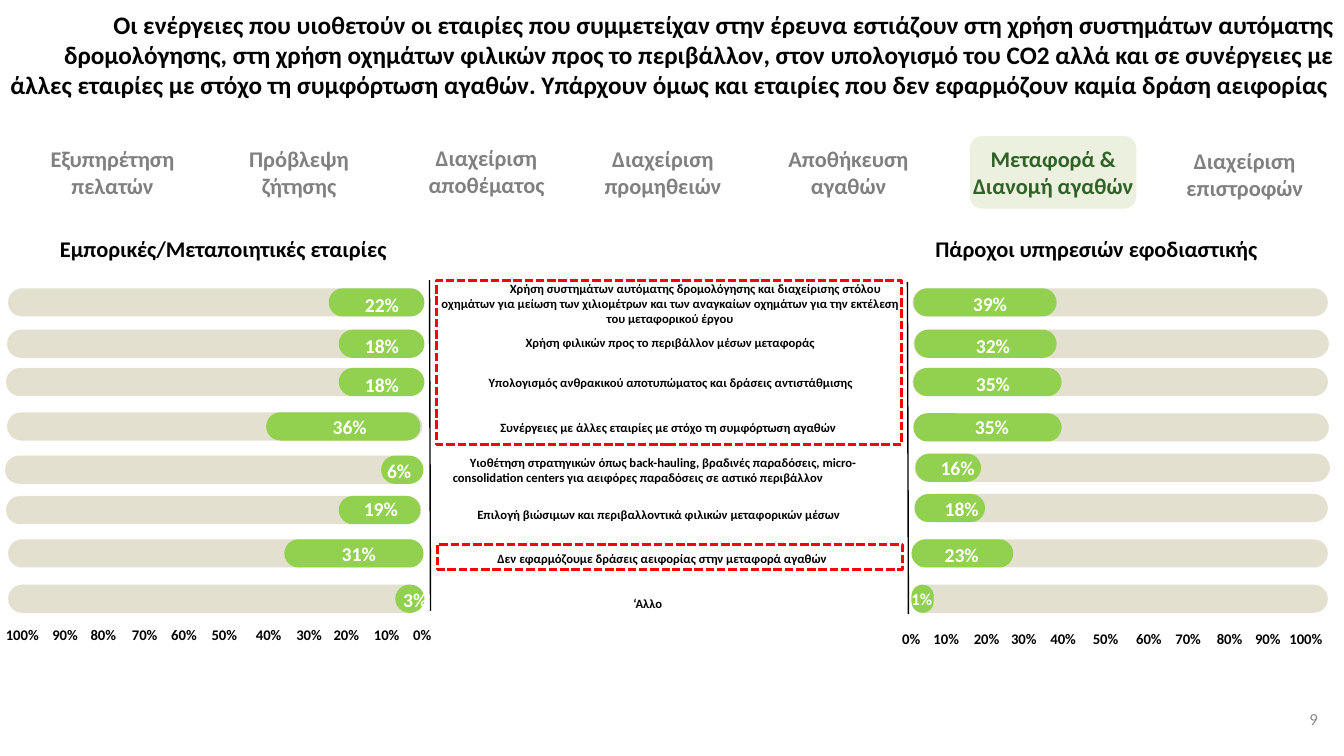
import pptx
import pptx.util
from pptx.dml.color import RGBColor
from pptx.enum.dml import MSO_LINE
from pptx.enum.shapes import MSO_CONNECTOR, MSO_SHAPE
from pptx.enum.text import MSO_ANCHOR, PP_ALIGN
from pptx.oxml.ns import qn
from lxml import etree

COLUMNS, ROWS = 1333, 750
BLACK, WHITE, GREY, GREEN, TRACK = "000000", "FFFFFF", "808080", "92D050", "DDD9C3"
BAR_HEIGHT = 28

# Stage: text, left, top
STAGES = [
    ("Εξυπηρέτηση πελατών", 29, 139),
    ("Πρόβλεψη ζήτησης", 214, 139),
    ("Διαχείριση αποθέματος", 400, 138),
    ("Διαχείριση προμηθειών", 575, 139),
    ("Αποθήκευση αγαθών", 759, 139),
    ("Διαχείριση επιστροφών", 1152, 141),
]

# Action: text, left, top, width
ACTIONS = [
    (" \tΧρήση συστημάτων αυτόματης δρομολόγησης και διαχείρισης στόλου οχημάτων για μείωση "
     "των χιλιομέτρων και των αναγκαίων οχημάτων για την εκτέλεση του μεταφορικού έργου", 426, 279, 477),
    (" \tΧρήση φιλικών προς το περιβάλλον μέσων μεταφοράς ", 388, 318, 506),
    (" \tΥπολογισμός ανθρακικού αποτυπώματος και δράσεις αντιστάθμισης", 378, 357, 524),
    (" \tΣυνέργειες με άλλες εταιρίες με στόχο τη συμφόρτωση αγαθών", 380, 402, 515),
    (" \tΥιοθέτηση στρατηγικών όπως back-hauling, βραδινές παραδόσεις, micro-consolidation "
     "centers για αειφόρες παραδόσεις σε αστικό περιβάλλον", 381, 444, 503),
    (" \tΕπιλογή βιώσιμων και περιβαλλοντικά φιλικών μεταφορικών μέσων ", 378, 488, 503),
    (" \tΔεν εφαρμόζουμε δράσεις αειφορίας στην μεταφορά αγαθών", 380, 532, 503),
    ("‘Αλλο", 391, 577, 503),
]

# Bar: value, middle, track left, track width, bar left, bar width, label left, label top
TRADE_BARS = [
    (22, 300, 8, 412, 326, 95, 352, 286),
    (18, 341, 7, 412, 336, 85, 352, 326),
    (18, 379, 6, 412, 336, 85, 352, 365),
    (36, 423, 7, 412, 264, 153, 320, 407),
    (6, 466, 5, 412, 378, 42, 374, 450),
    (19, 506, 6, 412, 336, 81, 351, 488),
    (31, 549, 8, 412, 282, 138, 329, 533),
    (3, 594, 8, 412, 392, 29, 390, 578),
]
PROVIDER_BARS = [
    (39, 300, 905, 412, 906, 142, 955, 285),
    (32, 341, 906, 412, 907, 141, 958, 326),
    (35, 379, 905, 412, 906, 147, 958, 364),
    (35, 424, 906, 412, 906, 147, 957, 407),
    (16, 464, 907, 412, 908, 65, 923, 447),
    (18, 504, 915, 402, 907, 70, 927, 488),
    (23, 549, 905, 412, 904, 101, 927, 534),
    (1, 594, 905, 412, 904, 22, 894, 579),
]

# Axis label lefts, from 0% to 100%
TRADE_AXIS = [400, 361, 321, 284, 244, 200, 160, 121, 80, 42, -4]
PROVIDER_AXIS = [885, 916, 956, 993, 1032, 1074, 1117, 1156, 1197, 1235, 1269]


def color(value):
    return RGBColor.from_string(value)


class SlideBuilder:
    """Places styled elements on a grid of COLUMNS by ROWS."""

    font_name = "Calibri"

    def __init__(self, presentation):
        self.column = presentation.slide_width / COLUMNS
        self.row = presentation.slide_height / ROWS
        self.slide = presentation.slides.add_slide(presentation.slide_layouts[6])

    def place(self, left, top, width, height):
        return (round(left * self.column), round(top * self.row),
                round(width * self.column), round(height * self.row))

    def text(self, words, left, top, width, height, size, fill=BLACK, align=PP_ALIGN.CENTER,
             anchor=MSO_ANCHOR.TOP, bold=True, spacing=None):
        shape = self.slide.shapes.add_textbox(*self.place(left, top, width, height))
        frame = shape.text_frame
        frame.word_wrap = True
        frame.vertical_anchor = anchor
        paragraph = frame.paragraphs[0]
        paragraph.text = words
        paragraph.alignment = align
        if spacing:
            paragraph.line_spacing = spacing
        font = paragraph.font
        font.name, font.size, font.bold = self.font_name, pptx.util.Pt(size), bold
        font.color.rgb = color(fill)

    def rounded(self, left, top, width, height, fill, roundness=0.5, opacity=None):
        shape = self.slide.shapes.add_shape(
            MSO_SHAPE.ROUNDED_RECTANGLE, *self.place(left, top, width, height))
        shape.shadow.inherit = False
        shape.adjustments[0] = roundness
        shape.fill.solid()
        shape.fill.fore_color.rgb = color(fill)
        shape.line.fill.background()
        if opacity:
            tint = shape.fill._xPr.find(qn("a:solidFill"))[0]
            etree.SubElement(tint, qn("a:alpha"), val=str(opacity * 1000))

    def highlight(self, left, top, width, height):
        shape = self.slide.shapes.add_shape(
            MSO_SHAPE.RECTANGLE, *self.place(left, top, width, height))
        shape.shadow.inherit = False
        shape.fill.background()
        shape.line.color.rgb = color("FF0000")
        shape.line.width = pptx.util.Pt(2)
        shape.line.dash_style = MSO_LINE.SQUARE_DOT

    def line(self, left, top, right, bottom):
        connector = self.slide.shapes.add_connector(
            MSO_CONNECTOR.STRAIGHT, *self.place(left, top, right, bottom))
        connector.line.color.rgb = color(BLACK)
        connector.line.width = pptx.util.Pt(1)
        etree.SubElement(connector._element.spPr, qn("a:effectLst"))

    def bar(self, value, middle, track_left, track_width, left, width, label_left, label_top):
        top = middle - BAR_HEIGHT / 2
        self.rounded(track_left, top, track_width, BAR_HEIGHT, TRACK, opacity=80)
        self.rounded(left, top, width, BAR_HEIGHT, GREEN)
        self.text(f"{value}%", label_left, label_top, 71, 34, 12 if value == 1 else 14,
                  WHITE, PP_ALIGN.LEFT)

    def axis(self, lefts, top):
        for step, left in enumerate(lefts):
            self.text(f"{step * 10}%", left, top, 67 if step == 10 else 55, 28, 10.5,
                      align=PP_ALIGN.LEFT, spacing=0.95)


def main():
    presentation = pptx.Presentation()
    presentation.slide_width = pptx.util.Inches(13.33)
    presentation.slide_height = pptx.util.Inches(7.5)
    builder = SlideBuilder(presentation)

    # Title and page number
    builder.text(
        "Οι ενέργειες που υιοθετούν οι εταιρίες που συμμετείχαν στην έρευνα εστιάζουν στη χρήση "
        "συστημάτων αυτόματης δρομολόγησης, στη χρήση οχημάτων φιλικών προς το περιβάλλον, στον "
        "υπολογισμό του CO2 αλλά και σε συνέργειες με άλλες εταιρίες με στόχο τη συμφόρτωση αγαθών. "
        "Υπάρχουν όμως και εταιρίες που δεν εφαρμόζουν καμία δράση αειφορίας ",
        0, 4, 1333, 101, 18, align=PP_ALIGN.RIGHT)
    builder.text("9", 1084, 693, 233, 40, 12, "8C8C8C", PP_ALIGN.RIGHT, MSO_ANCHOR.MIDDLE, bold=False)

    # Stages, with the current one highlighted
    for words, left, top in STAGES:
        builder.text(words, left, top, 165, 64, 16, GREY)
    builder.rounded(962, 135, 165, 72, "EBF1DE", roundness=0.17)
    builder.text("Μεταφορά & Διανομή αγαθών", 952, 139, 185, 64, 16, "306228")

    # Bars of both groups, with headings and axes
    builder.text("Εμπορικές/Μεταποιητικές εταιρίες", 37, 228, 369, 37, 16)
    builder.text("Πάροχοι υπηρεσιών εφοδιαστικής", 903, 228, 369, 37, 16)
    for bar in TRADE_BARS + PROVIDER_BARS:
        builder.bar(*bar)
    builder.axis(TRADE_AXIS, 617)
    builder.axis(PROVIDER_AXIS, 621)

    # Actions between the bars
    for words, left, top, width in ACTIONS:
        builder.text(words, left, top, width, 44, 9, anchor=MSO_ANCHOR.MIDDLE)

    # Base lines and highlighted actions
    builder.line(426, 278, 427, 606)
    builder.line(900, 280, 901, 609)
    builder.highlight(433, 278, 461, 163)
    builder.highlight(434, 540, 461, 25)

    presentation.save("out.pptx")


if __name__ == "__main__":
    main()
